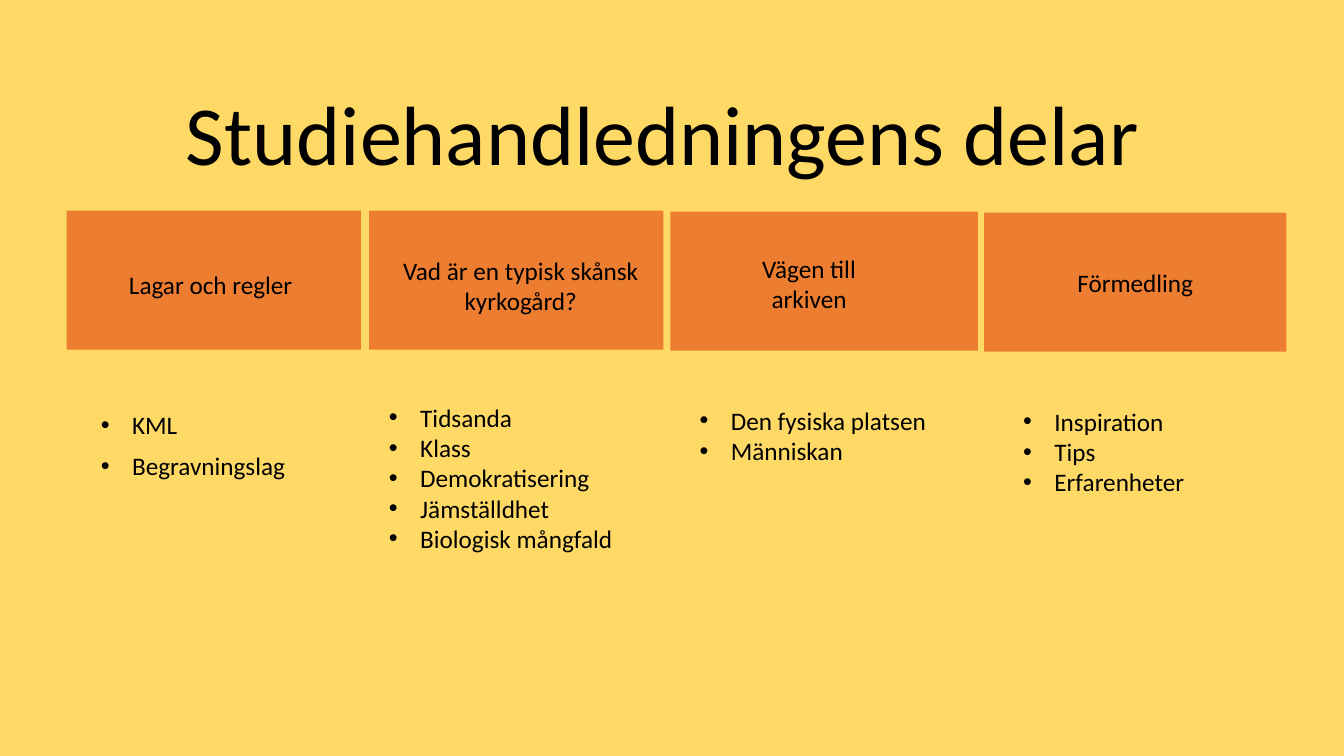
from dataclasses import dataclass

from lxml import etree
from pptx import Presentation, util as u
from pptx.dml.color import RGBColor
from pptx.enum import shapes, text
from pptx.oxml.ns import qn

YELLOW, ORANGE, BLACK = "FFD966", "ED7D31", "000000"
INDENT = u.Inches(0.31)


@dataclass
class Box:
    left: float
    top: float
    width: float
    height: float

    def lengths(self) -> list:
        return [u.Inches(n) for n in (self.left, self.top, self.width, self.height)]


@dataclass
class Part:
    card: Box
    heading: str
    heading_box: Box
    topics: list[str]
    topics_box: Box


PARTS = [
    Part(Box(0.66, 2.09, 2.92, 1.38), "Lagar och regler", Box(0.85, 2.62, 2.48, 0.4),
         ["KML", "Begravningslag"], Box(0.9, 3.83, 2.66, 1.47)),
    Part(Box(3.66, 2.09, 2.92, 1.38), "Vad är en typisk skånsk kyrkogård?", Box(3.76, 2.48, 2.81, 1.01),
         ["Tidsanda", "Klass", "Demokratisering", "Jämställdhet", "Biologisk mångfald"],
         Box(3.76, 3.94, 2.66, 1.62)),
    Part(Box(6.65, 2.1, 3.05, 1.38), "Vägen till arkiven", Box(7.26, 2.46, 1.53, 1.01),
         ["Den fysiska platsen", "Människan"], Box(6.84, 3.97, 2.66, 0.71)),
    Part(Box(9.76, 2.11, 3, 1.38), "Förmedling", Box(10.58, 2.6, 1.36, 0.4),
         ["Inspiration", "Tips", "Erfarenheter"], Box(10.05, 3.98, 2.24, 1.01)),
]


def paint(fill, color: str) -> None:
    fill.solid()
    fill.fore_color.rgb = RGBColor.from_string(color)


def move(shape, box: Box) -> None:
    shape.left, shape.top, shape.width, shape.height = box.lengths()


def write(shape, content: str, size: int, alignment) -> None:
    frame = shape.text_frame
    frame.word_wrap = True
    frame.auto_size = text.MSO_AUTO_SIZE.NONE
    frame.text = content
    for paragraph in frame.paragraphs:
        paragraph.alignment = alignment
        for run in paragraph.runs:
            run.font.name = "Calibri"
            run.font.size = u.Pt(size)
            paint(run.font.fill, BLACK)


def add_bullets(shape) -> None:
    for paragraph in shape.text_frame.paragraphs:
        properties = paragraph._p.get_or_add_pPr()
        properties.set("marL", str(INDENT))
        properties.set("indent", str(-INDENT))
        etree.SubElement(properties, qn("a:buFont")).set("typeface", "Arial")
        etree.SubElement(properties, qn("a:buChar")).set("char", "•")


def add_card(slide, part: Part) -> None:
    card = slide.shapes.add_shape(shapes.MSO_SHAPE.RECTANGLE, *part.card.lengths())
    card.shadow.inherit = False
    paint(card.fill, ORANGE)
    card.line.fill.background()
    heading = slide.shapes.add_textbox(*part.heading_box.lengths())
    write(heading, part.heading, 18, text.PP_ALIGN.CENTER)


def fill_topics(shape, part: Part) -> None:
    move(shape, part.topics_box)
    write(shape, "\n".join(part.topics), 18, text.PP_ALIGN.LEFT)
    add_bullets(shape)


def set_title(title) -> None:
    move(title, Box(1.57, 0.56, 10, 1.31))
    write(title, "Studiehandledningens delar", 60, text.PP_ALIGN.CENTER)
    title.text_frame.vertical_anchor = text.MSO_ANCHOR.BOTTOM
    title.text_frame.paragraphs[0].line_spacing = 0.9


def set_subtitle(subtitle, part: Part) -> None:
    fill_topics(subtitle, part)
    frame = subtitle.text_frame
    frame.vertical_anchor = text.MSO_ANCHOR.MIDDLE
    frame.margin_bottom = u.Inches(0.32)
    for index, paragraph in enumerate(frame.paragraphs):
        paragraph.line_spacing = 0.9
        paragraph.space_before = u.Pt(10 if index else 0)


def main() -> None:
    """Build the slide that lists the four parts of the study guide."""
    presentation = Presentation()
    presentation.slide_width, presentation.slide_height = u.Inches(13.33), u.Inches(7.5)
    slide = presentation.slides.add_slide(presentation.slide_layouts[0])
    paint(slide.background.fill, YELLOW)
    set_title(slide.shapes.title)
    set_subtitle(slide.placeholders[1], PARTS[0])
    for part in PARTS:
        add_card(slide, part)
    for part in PARTS[1:]:
        fill_topics(slide.shapes.add_textbox(*part.topics_box.lengths()), part)
    presentation.save("out.pptx")


if __name__ == "__main__":
    main()
